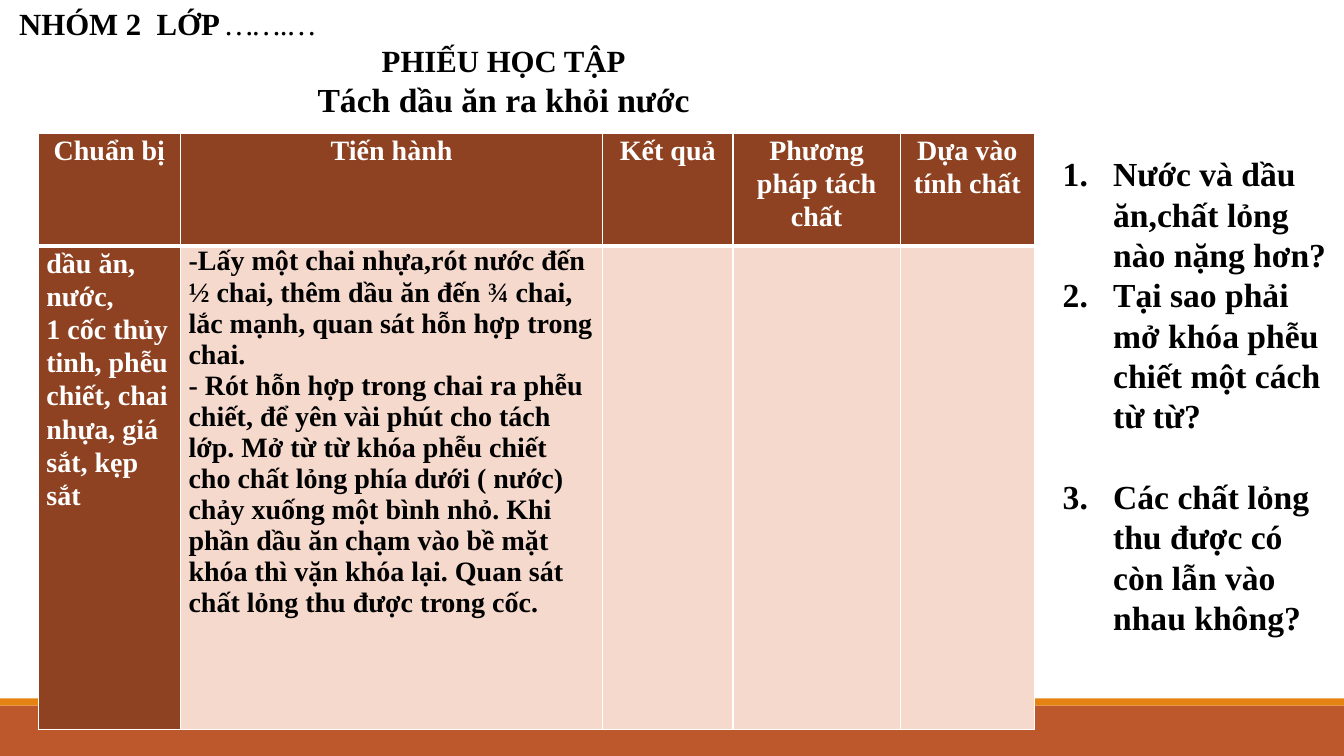
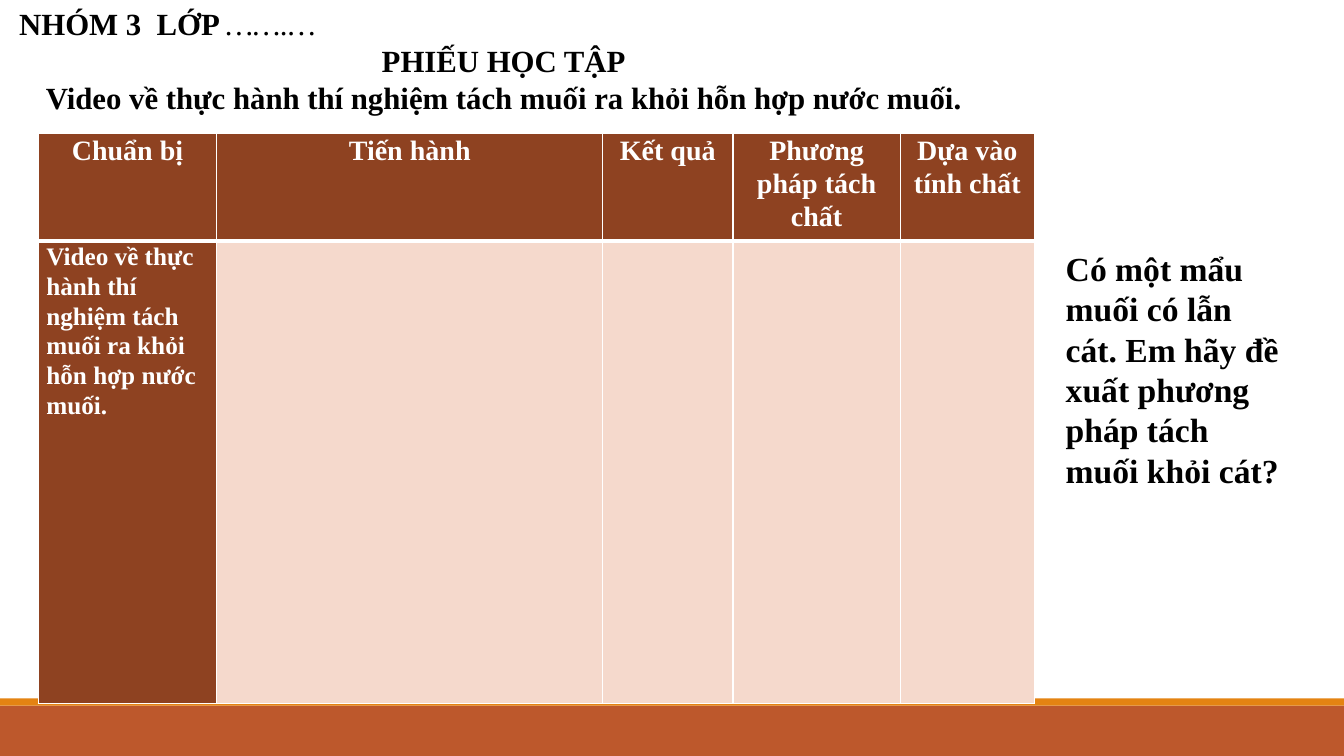
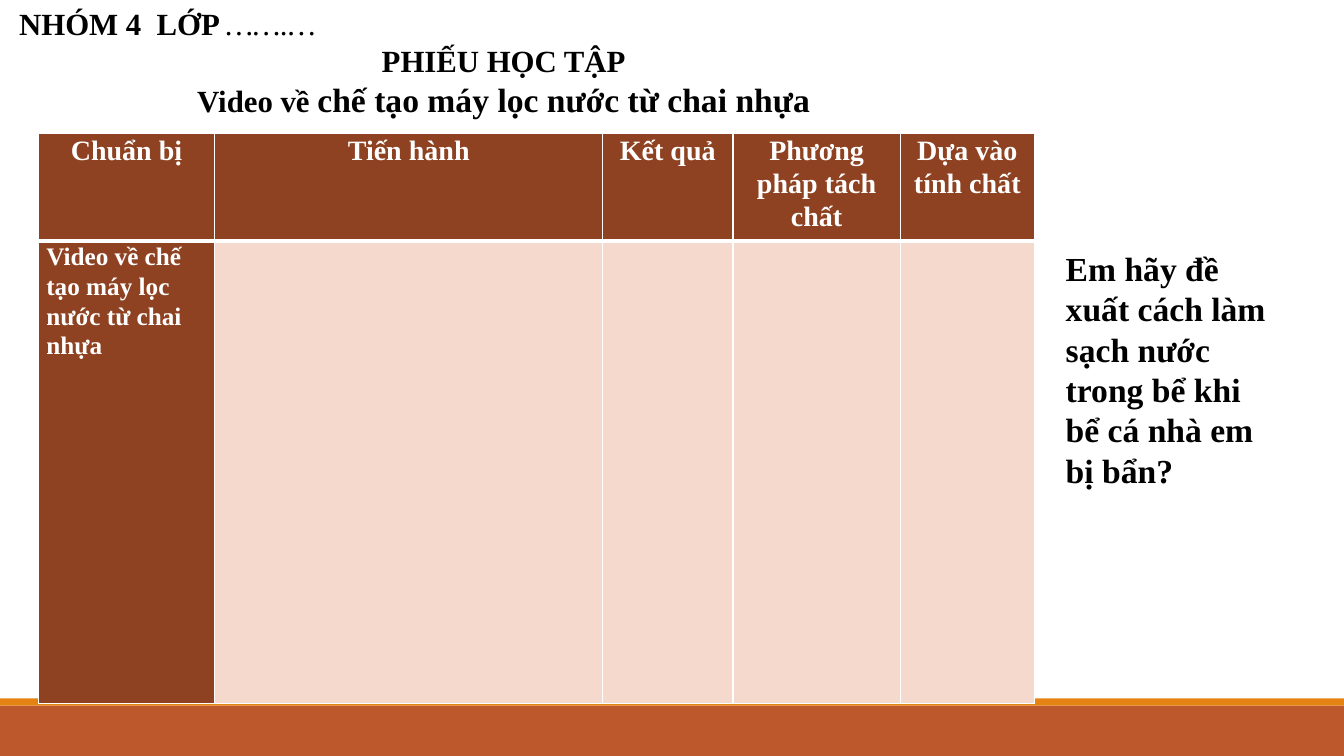
from dataclasses import dataclass

from pptx import Presentation
from pptx.dml.color import RGBColor as RGB
from pptx.enum.shapes import MSO_SHAPE as Shape
from pptx.enum.text import MSO_ANCHOR as Anchor, MSO_AUTO_SIZE as Fit, PP_ALIGN as Align
from pptx.oxml import parse_xml
from pptx.oxml.ns import nsdecls, qn
from pptx.util import Inches, Pt
from lxml.etree import SubElement


@dataclass(frozen=True)
class Theme:
    font: str = "Times New Roman"
    ink: str = "000000"
    white: str = "FFFFFF"
    dark: str = "8E4221"
    pale: str = "F5D9CC"
    rust: str = "BD582C"
    gold: str = "E48312"
    small: int = 18
    cell: int = 20
    head: int = 22
    big: int = 24


THEME = Theme()
HEADS = ["Chuẩn bị", "Tiến hành", "Kết quả", "Phương pháp tách chất", "Dựa vào tính chất"]
LEFT_SPAN = 5.6  # the first two columns together
REST = [1.29, 1.66, 1.33]


class Deck:
    def __init__(self, theme):
        self.theme = theme
        self.prs = Presentation()
        self.prs.slide_width, self.prs.slide_height = Inches(13.33), Inches(7.5)
        self.layout = self.prs.slide_layouts[1]
        self.slide = None

    def page(self):
        first = self.slide is None
        self.slide = self.prs.slides.add_slide(self.layout)
        if first:
            self.band(7, 0.5, self.theme.rust)
            self.band(6.93, 0.07, self.theme.gold)

    def band(self, top, high, color):
        """Draw a full-width band and move it to the shared layout."""
        bar = self.slide.shapes.add_shape(
            Shape.RECTANGLE, 0, Inches(top), self.prs.slide_width, Inches(high))
        bar.shadow.inherit = False
        bar.fill.solid()
        bar.fill.fore_color.rgb = RGB.from_string(color)
        bar.line.fill.background()
        self.layout.shapes.element.append(bar.element)

    def style(self, run, size, color=None, bold=True):
        font = run.font
        font.name, font.size = self.theme.font, Pt(size)
        font.bold, font.italic = bold, not bold
        font.color.rgb = RGB.from_string(color or self.theme.ink)

    def place(self, holder, left, top, wide, high):
        holder.left, holder.top = Inches(left), Inches(top)
        holder.width, holder.height = Inches(wide), Inches(high)
        frame = holder.text_frame
        frame.word_wrap, frame.auto_size = True, Fit.NONE
        frame.vertical_anchor = Anchor.TOP
        return frame

    def title(self, group, topic):
        """Topic is a list of (text, size) parts."""
        frame = self.place(self.slide.shapes.title, 0.09, 0, 9.81, 1.25)
        frame.text = f"NHÓM {group}  LỚP \nPHIẾU HỌC TẬP\n"
        name, sheet, line = frame.paragraphs
        name.alignment = Align.LEFT
        sheet.alignment = line.alignment = Align.CENTER
        for par in (name, sheet):
            self.style(par.runs[0], self.theme.head)
        dots = name.add_run()
        dots.text = "…….…"
        self.style(dots, self.theme.head, bold=False)
        for text, size in topic:
            run = line.add_run()
            run.text = text
            self.style(run, size)

    def ask(self, box, lines, gaps=None):
        """Fill the body; several lines are numbered, gaps maps a line to space before."""
        frame = self.place(self.slide.placeholders[1], *box)
        frame.text = "\n".join(lines)
        many = len(lines) > 1
        for i, par in enumerate(frame.paragraphs):
            par.space_before = Pt((gaps or {}).get(i, 0))
            self.style(par.runs[0], self.theme.big)
            props = par._p.get_or_add_pPr()
            dent = Inches(0.5) if many else 0
            props.set("marL", str(dent))
            props.set("indent", str(-dent))
            if many:
                SubElement(props, qn("a:buAutoNum"), type="arabicPeriod")
            else:
                SubElement(props, qn("a:buNone"))

    def edge(self, cell, top, foot):
        """White cell borders, with their widths in points."""
        props = cell._tc.get_or_add_tcPr()
        for i, (side, size) in enumerate(zip("LRTB", (1, 1, top, foot))):
            props.insert(i, parse_xml(
                f'<a:ln{side} {nsdecls("a")} w="{Pt(size)}"><a:solidFill>'
                f'<a:srgbClr val="{self.theme.white}"/></a:solidFill></a:ln{side}>'))

    def cell(self, cell, text, size, head, dark):
        look = self.theme
        cell.fill.solid()
        cell.fill.fore_color.rgb = RGB.from_string(look.dark if dark else look.pale)
        cell.margin_left = cell.margin_right = Inches(0.08)
        cell.margin_top = cell.margin_bottom = 0
        self.edge(cell, *((1, 3) if head else (3, 1)))
        cell.text_frame.text = text
        for par in cell.text_frame.paragraphs:
            par.alignment = Align.CENTER if head else Align.LEFT
            if dark:
                par.line_spacing = 1.07
            for run in par.runs:
                self.style(run, size, look.white if dark else look.ink)

    def table(self, first, highs, kit, steps="", size=THEME.cell):
        wides = [first, LEFT_SPAN - first, *REST]
        grid = self.slide.shapes.add_table(
            2, len(wides), Inches(0.38), Inches(1.32),
            Inches(sum(wides)), Inches(sum(highs))).table
        for col, wide in zip(grid.columns, wides):
            col.width = Inches(wide)
        for row, high in zip(grid.rows, highs):
            row.height = Inches(high)
        for c, head in enumerate(HEADS):
            self.cell(grid.cell(0, c), head, self.theme.cell, True, True)
        for c, text in enumerate([kit, steps, "", "", ""]):
            self.cell(grid.cell(1, c), text, size, False, c == 0)


def main():
    deck = Deck(THEME)

    # Group 2: oil and water
    deck.page()
    deck.title(2, [("Tách dầu ăn ra khỏi nước", THEME.big)])
    deck.table(
        1.41, (1.12, 4.8),
        "dầu ăn, nước,\n1 cốc thủy tinh, phễu chiết, chai nhựa, giá sắt, kẹp sắt",
        "-Lấy một chai nhựa,rót nước đến ½ chai, thêm dầu ăn đến ¾ chai, "
        "lắc mạnh, quan sát hỗn hợp trong chai.\n"
        "- Rót hỗn hợp trong chai ra phễu chiết, để yên vài phút cho tách lớp. "
        "Mở từ từ khóa phễu chiết cho chất lỏng phía dưới ( nước) chảy xuống một "
        "bình nhỏ. Khi phần dầu ăn chạm vào bề mặt khóa thì vặn khóa lại. "
        "Quan sát chất lỏng thu được trong cốc.")
    deck.ask(
        (10.44, 1.47, 2.85, 5.35),
        ["Nước và dầu ăn,chất lỏng nào nặng hơn?",
         "Tại sao phải mở khóa phễu chiết một cách từ từ?",
         "Các chất lỏng thu được có còn lẫn vào nhau không?"],
        gaps={2: 29})

    # Groups 3 and 4: video tasks
    salt = "Video về thực hành thí nghiệm tách muối ra khỏi hỗn hợp nước muối."
    lead, make = "Video về ", "chế tạo máy lọc nước từ chai nhựa"
    tasks = [
        (3, [(salt, THEME.head)], 1.77, salt,
         "Có một mẩu muối có lẫn cát. Em hãy đề xuất phương pháp tách muối khỏi cát?"),
        (4, [(lead, THEME.head), (make, THEME.big)], 1.75, lead + make,
         "Em hãy đề xuất cách làm sạch nước trong bể khi bể cá nhà em bị bẩn?"),
    ]
    for group, topic, first, kit, query in tasks:
        deck.page()
        deck.title(group, topic)
        deck.table(first, (1.07, 4.59), kit, size=THEME.small)
        deck.ask((10.47, 2.41, 2.35, 2.93), [query])

    deck.prs.save("out.pptx")


if __name__ == "__main__":
    main()
